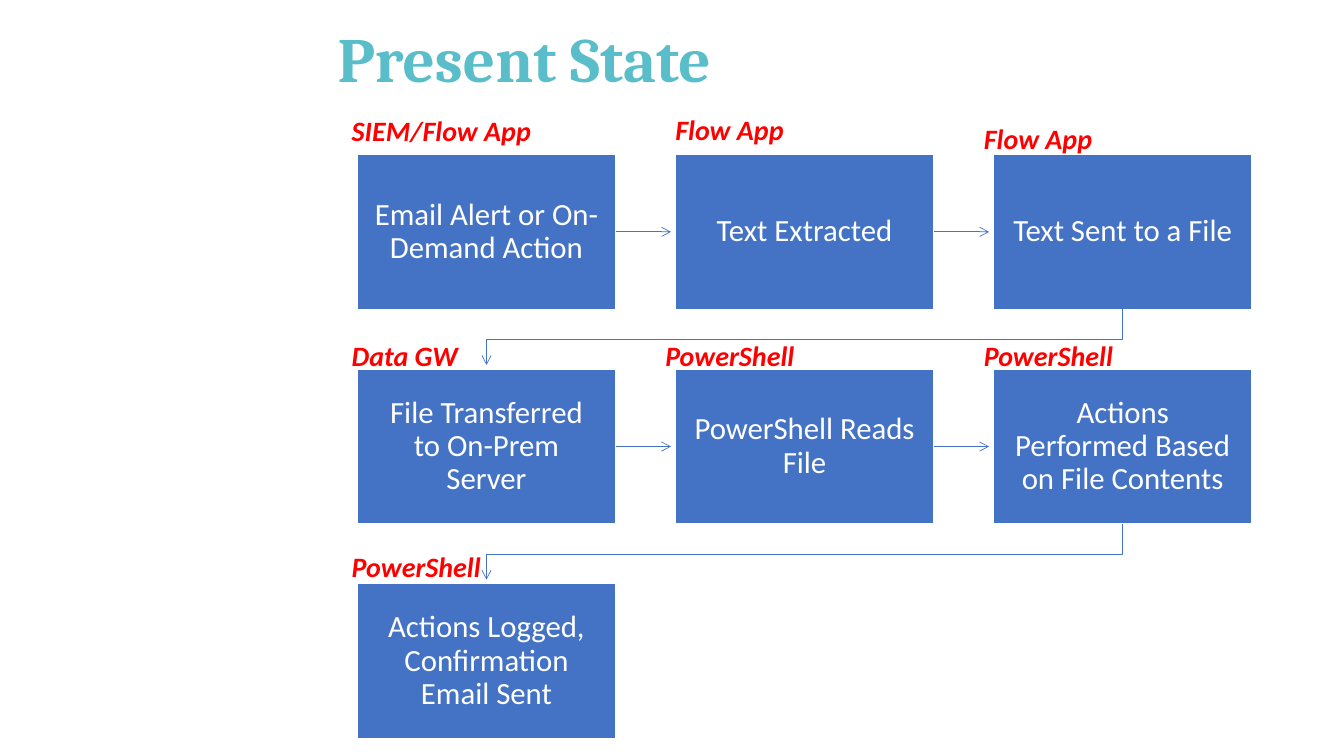
from pptx import Presentation
from pptx.dml.color import RGBColor
from pptx.enum.shapes import MSO_CONNECTOR as Link, MSO_SHAPE as Shape
from pptx.enum.text import MSO_ANCHOR as Anchor, PP_ALIGN as Align
from pptx.oxml.ns import qn
from pptx.util import Inches, Pt
from lxml.etree import SubElement

TITLE = "Present State"
STEPS = [
    "Email Alert or On-Demand Action",
    "Text Extracted",
    "Text Sent to a File",
    "File Transferred to On-Prem Server",
    "PowerShell Reads File",
    "Actions Performed Based on File Contents",
    "Actions Logged, Confirmation Email Sent",
]
TOOLS = [
    ("SIEM/Flow App", 3.39, 1.08),
    ("Flow App", 6.6, 1.07),
    ("Flow App", 9.66, 1.16),
    ("Data GW", 3.39, 3.31),
    ("PowerShell", 6.5, 3.31),
    ("PowerShell", 9.66, 3.31),
    ("PowerShell", 3.39, 5.4),
]
COLORS = {"title": "59BEC9", "box": "4472C4", "white": "FFFFFF", "tool": "FF0000"}
COLS = 3
LEFT, TOP = 3.54, 1.53
WIDE, HIGH = 2.57, 1.54
STEP_X, STEP_Y = 3.155, 2.13
GAP, DROP = 0.04, 0.3


def color(name):
    return RGBColor.from_string(COLORS[name])


def write(shape, text, font, size, tint, bold=False, italic=False):
    frame = shape.text_frame
    frame.word_wrap = True
    para = frame.paragraphs[0]
    run = para.add_run()
    run.text = text
    run.font.name, run.font.size = font, Pt(size)
    run.font.bold, run.font.italic = bold, italic
    run.font.color.rgb = color(tint)
    return frame, para


def add_text(slide, x, y, w, h, *style):
    box = slide.shapes.add_textbox(*map(Inches, (x, y, w, h)))
    return write(box, *style)


def add_box(slide, x, y, text):
    box = slide.shapes.add_shape(Shape.RECTANGLE, *map(Inches, (x, y, WIDE, HIGH)))
    box.shadow.inherit = False
    box.fill.solid()
    box.fill.fore_color.rgb = color("box")
    box.line.color.rgb = color("white")
    box.line.width = Pt(1)
    frame, para = write(box, text, "Calibri", 22, "white")
    frame.vertical_anchor = Anchor.MIDDLE
    frame.margin_left = frame.margin_right = Inches(0.17)
    frame.margin_top = frame.margin_bottom = Inches(0.17)
    para.alignment, para.line_spacing = Align.CENTER, 0.9
    return box


def style_arrow(arrow):
    arrow.line.color.rgb = color("box")
    arrow.line.width = Pt(0.5)
    SubElement(arrow.line._get_or_add_ln(), qn("a:tailEnd"), type="arrow")


def link_next(slide, box, x, y):
    mid = y + HIGH / 2
    ends = (x + WIDE, mid, x + STEP_X - GAP, mid)
    arrow = slide.shapes.add_connector(Link.STRAIGHT, *map(Inches, ends))
    arrow.begin_connect(box, 3)
    style_arrow(arrow)
    SubElement(arrow._element.spPr, qn("a:effectLst"))


def link_row(slide, x, y):
    start, end = x + WIDE / 2, LEFT + WIDE / 2
    base = y + HIGH
    turns = [(start, base + DROP), (end, base + DROP), (end, y + STEP_Y - GAP)]
    pen = slide.shapes.build_freeform(Inches(start), Inches(base))
    pen.add_line_segments([(Inches(a), Inches(b)) for a, b in turns], close=False)
    arrow = pen.convert_to_shape()
    arrow.shadow.inherit = False
    arrow.fill.background()
    style_arrow(arrow)


def main():
    """Build the slide of the present alert workflow."""
    deck = Presentation()
    deck.slide_width, deck.slide_height = Inches(13.33), Inches(7.5)
    slide = deck.slides.add_slide(deck.slide_layouts[6])

    frame, para = add_text(slide, 3.25, 0.19, 9.17, 0.85, TITLE, "Cambria", 45, "title", True)
    frame.vertical_anchor = Anchor.MIDDLE
    para.line_spacing = 0.9

    for i, text in enumerate(STEPS):
        row, col = divmod(i, COLS)
        x, y = LEFT + col * STEP_X, TOP + row * STEP_Y
        box = add_box(slide, x, y, text)
        if i == len(STEPS) - 1:
            break
        if col < COLS - 1:
            link_next(slide, box, x, y)
        else:
            link_row(slide, x, y)

    for text, x, y in TOOLS:
        add_text(slide, x, y, 2.03, 0.44, text, "Calibri", 20, "tool", True, True)

    deck.save("out.pptx")


if __name__ == "__main__":
    main()
